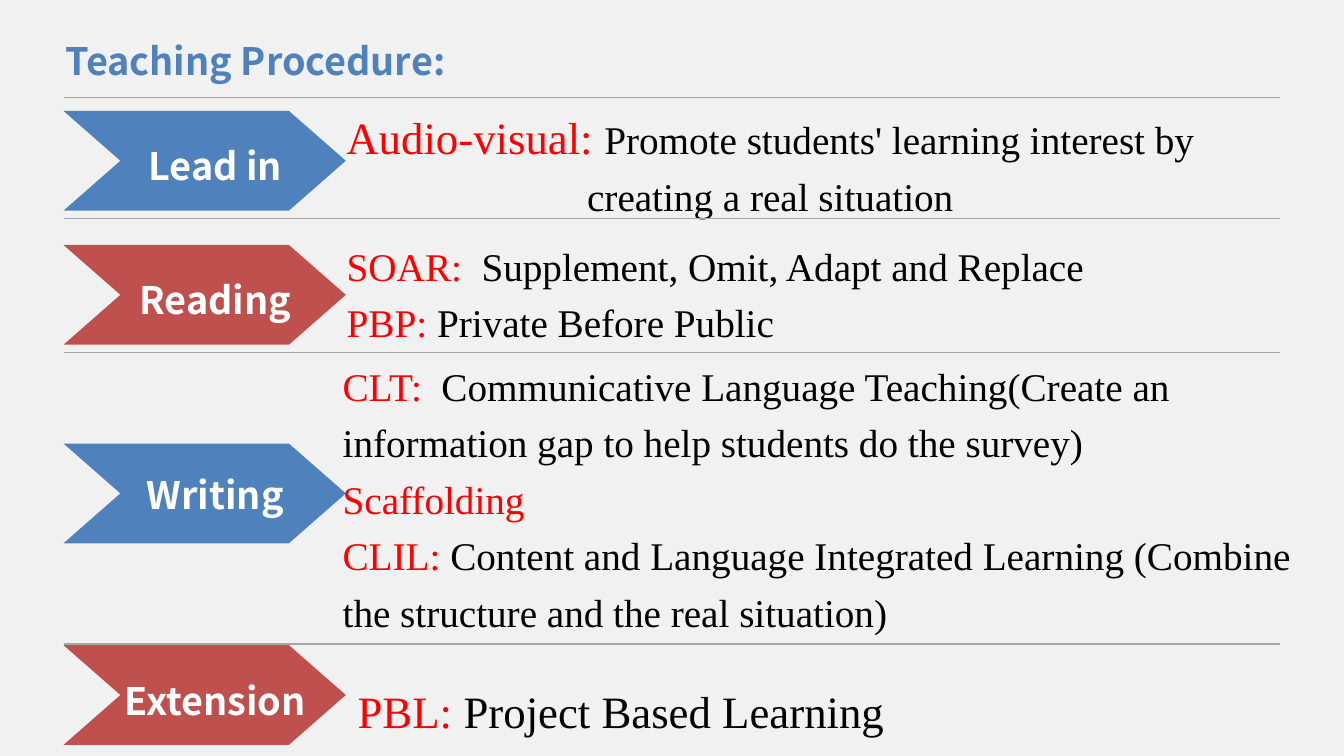
from dataclasses import dataclass

from lxml import etree
from pptx import Presentation
from pptx.dml.color import RGBColor
from pptx.enum.shapes import MSO_CONNECTOR, MSO_SHAPE
from pptx.enum.text import MSO_ANCHOR, MSO_AUTO_SIZE, PP_ALIGN
from pptx.oxml.ns import qn
from pptx.util import Inches, Pt

CHEVRON = MSO_SHAPE.CHEVRON
STRAIGHT = MSO_CONNECTOR.STRAIGHT
TOP, MIDDLE = MSO_ANCHOR.TOP, MSO_ANCHOR.MIDDLE
LEFT, CENTER = PP_ALIGN.LEFT, PP_ALIGN.CENTER
GROW = MSO_AUTO_SIZE.SHAPE_TO_FIT_TEXT


@dataclass(frozen=True)
class Theme:
    background: str = "F1F1F1"
    blue: str = "4F81BD"
    red: str = "C0504D"
    white: str = "FFFFFF"
    term: str = "FF0000"
    body: str = "000000"
    rule: str = "A6A6A6"
    heading_font: str = "Noto Sans CJK SC"
    body_font: str = "Times New Roman"
    heading_size: int = 27
    body_size: int = 28
    large_size: int = 32


THEME = Theme()
CHEVRON_LEFT, CHEVRON_WIDTH, CHEVRON_HEIGHT = 0.63, 2.8, 0.99
RULE_LEFT, RULE_RIGHT = 0.63, 12.7
RULE_TOPS = (0.97, 2.17, 3.5, 6.39)

# Name, colour, chevron top, label shift
STAGES = [
    ("Lead in", THEME.blue, 1.1, 0),
    ("Reading", THEME.red, 2.43, 0),
    ("Writing", THEME.blue, 4.4, -0.04),
    ("Extension", THEME.red, 6.4, 0),
]

# Box, alignment, term size, body size, paragraphs of (term, explanation)
METHODS = [
    ((2.87, 0.93, 9.54, 1.26), CENTER, THEME.large_size, THEME.body_size, [
        ("Audio-visual: ",
         "Promote students' learning interest by creating a real situation"),
    ]),
    ((3.34, 2.26, 9.54, 1.23), LEFT, THEME.body_size, THEME.body_size, [
        ("SOAR:  ", "Supplement, Omit, Adapt and Replace"),
        ("PBP: ", "Private Before Public"),
    ]),
    ((3.3, 3.45, 9.98, 2.94), LEFT, THEME.body_size, THEME.body_size, [
        ("CLT:  ", "Communicative Language Teaching(Create an information gap "
                   "to help students do the survey)"),
        ("Scaffolding", ""),
        ("CLIL: ", "Content and Language Integrated Learning (Combine "
                   "the structure and the real situation)"),
    ]),
    ((1.69, 6.63, 8.94, 0.69), CENTER, THEME.large_size, THEME.large_size, [
        ("PBL: ", "Project Based Learning"),
    ]),
]


def set_frame(frame, inset_x, inset_y, anchor=TOP, wrap=True):
    settings = {
        "margin_left": Inches(inset_x), "margin_right": Inches(inset_x),
        "margin_top": Inches(inset_y), "margin_bottom": Inches(inset_y),
        "vertical_anchor": anchor, "word_wrap": wrap, "auto_size": GROW,
    }
    for name, value in settings.items():
        setattr(frame, name, value)


def set_para(para, align, spacing):
    settings = {"alignment": align, "line_spacing": spacing,
                "space_before": Pt(0), "space_after": Pt(0)}
    for name, value in settings.items():
        setattr(para, name, value)


def add_span(para, text, font, size, color, bold=False):
    span = para.add_run()
    span.text = text
    for name, value in {"name": font, "size": Pt(size), "bold": bold}.items():
        setattr(span.font, name, value)
    span.font.color.rgb = RGBColor.from_string(color)


def add_heading_span(para, text, color):
    add_span(para, text, THEME.heading_font, THEME.heading_size, color, True)


def add_title(page, box):
    title = page.shapes.title
    for name, value in zip(("left", "top", "width", "height"), box):
        setattr(title, name, Inches(value))
    set_frame(title.text_frame, 0.13, 0.07, wrap=False)
    para = title.text_frame.paragraphs[0]
    set_para(para, LEFT, 1.0)
    add_heading_span(para, "Teaching Procedure:", THEME.blue)


def add_stage(page, box, name, color, label_shift):
    """Group a chevron with its stage name."""
    left, top, width, height = box
    group = page.shapes.add_group_shape()
    chevron = group.shapes.add_shape(CHEVRON, *map(Inches, box))
    chevron.adjustments[0] = 0.57
    chevron.shadow.inherit = False
    chevron.fill.solid()
    chevron.fill.fore_color.rgb = RGBColor.from_string(color)
    chevron.line.fill.background()

    label = group.shapes.add_textbox(
        Inches(left + 0.32), Inches(top + 0.2 + label_shift),
        Inches(width - 0.43), Inches(height - 0.39))
    set_frame(label.text_frame, 0, 0, MIDDLE)
    para = label.text_frame.paragraphs[0]
    set_para(para, CENTER, 1.2)
    add_heading_span(para, name, THEME.white)


def add_methods(page, box, align, term_size, body_size, entries):
    """Write red terms, each followed by its explanation."""
    frame = page.shapes.add_textbox(*map(Inches, box)).text_frame
    set_frame(frame, 0.1, 0.05)
    for index, (term, explanation) in enumerate(entries):
        para = frame.add_paragraph() if index else frame.paragraphs[0]
        set_para(para, align, 1.2)
        add_span(para, term, THEME.body_font, term_size, THEME.term)
        if explanation:
            add_span(para, explanation, THEME.body_font, body_size, THEME.body)


def add_rule(page, top):
    rule = page.shapes.add_connector(
        STRAIGHT, Inches(RULE_LEFT), Inches(top), Inches(RULE_RIGHT), Inches(top))
    rule.line.color.rgb = RGBColor.from_string(THEME.rule)
    rule.line.width = Pt(1)
    etree.SubElement(rule._element.spPr, qn("a:effectLst"))


def build_procedure(deck):
    page = deck.slides.add_slide(deck.slide_layouts.get_by_name("Title Only"))
    page.background.fill.solid()
    page.background.fill.fore_color.rgb = RGBColor.from_string(THEME.background)
    add_title(page, (0.52, 0.3, 4.13, 0.59))
    for name, color, top, label_shift in STAGES:
        box = (CHEVRON_LEFT, top, CHEVRON_WIDTH, CHEVRON_HEIGHT)
        add_stage(page, box, name, color, label_shift)
    for method in METHODS:
        add_methods(page, *method)
    for top in RULE_TOPS:
        add_rule(page, top)


def main():
    deck = Presentation()
    deck.slide_width, deck.slide_height = Inches(13.33), Inches(7.5)
    build_procedure(deck)
    deck.save("out.pptx")


if __name__ == "__main__":
    main()
